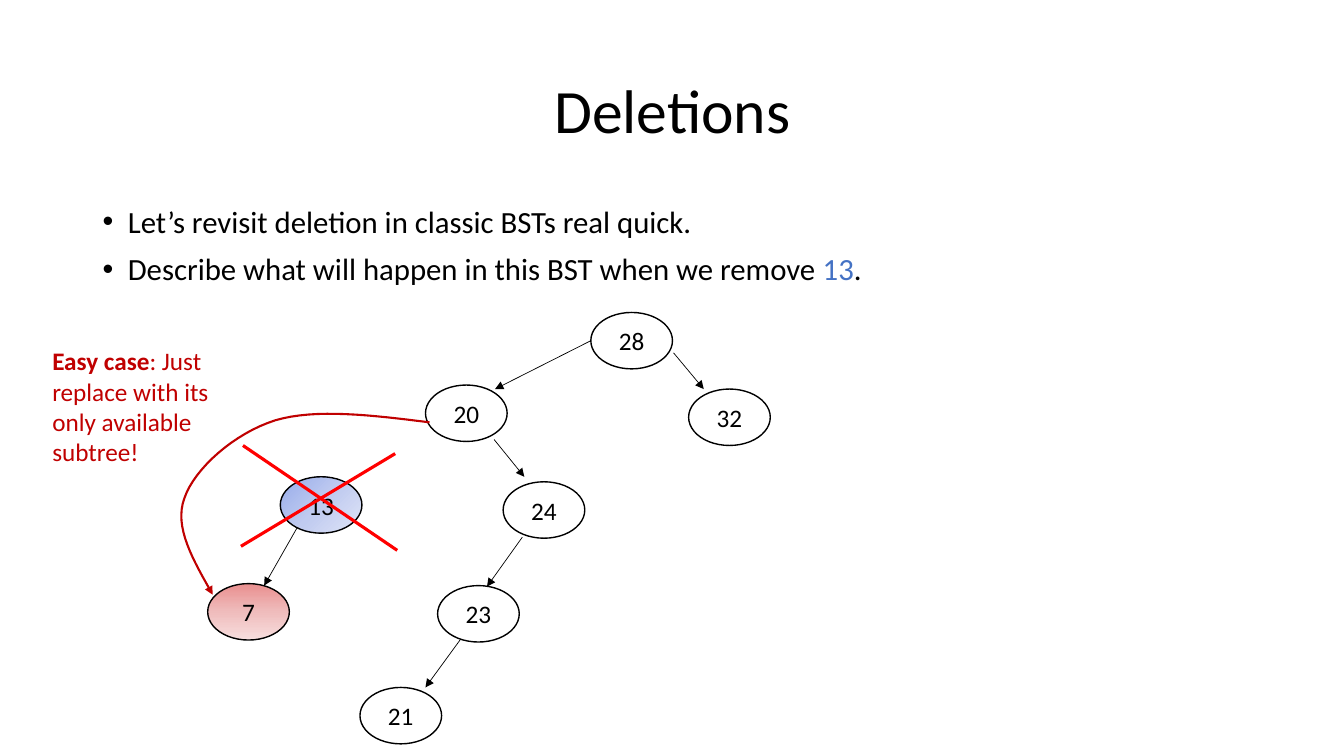
from lxml.etree import SubElement
from pptx import Presentation
from pptx.dml.color import RGBColor
from pptx.enum.shapes import MSO_CONNECTOR, MSO_SHAPE
from pptx.enum.text import MSO_ANCHOR, PP_ALIGN
from pptx.oxml.ns import qn
from pptx.util import Inches, Pt

HUES = {"ink": "000000", "blue": "4472C4", "note": "C00000", "cross": "FF0000"}
BLENDS = {
    "13": (45, ("96ABEA", "C0CBF0", "E0E5F7")),
    "7": (90, ("E98F8F", "EFBCBC", "F7DEDE")),
}
NODES = {
    "28": (3.8, 0), "20": (2.16, 0.72), "13": (0.72, 1.63), "7": (0, 2.69),
    "32": (4.77, 0.76), "24": (2.93, 1.68), "23": (2.28, 2.71), "21": (1.51, 3.72),
}
EDGES = [
    ((3.8, 0.28), (2.85, 0.76)), ((0.89, 2.13), (0.56, 2.71)),
    ((2.84, 1.26), (3.14, 1.63)), ((4.62, 0.4), (4.92, 0.76)),
    ((3.12, 2.23), (2.77, 2.72)), ((2.51, 3.24), (2.16, 3.72)),
]
CROSS = [((0.35, 1.32), (1.88, 2.36)), ((0.33, 2.32), (1.86, 1.4))]
CURVE = [
    (2.2, 1.09), (1.64, 1.02), (1.07, 0.95), (0.67, 1.07), (0.26, 1.2),
    (-0.13, 1.55), (-0.23, 1.84), (-0.34, 2.13), (-0.14, 2.46), (0.05, 2.8),
]


def add_run(para, text, size, hue="ink", bold=False):
    """Add one run of text in the slide's font."""
    run = para.add_run()
    run.text = text
    run.font.name = "Calibri"
    run.font.size = Pt(size)
    run.font.bold = bold
    run.font.color.rgb = RGBColor.from_string(HUES[hue])


def set_line(line, hue, width, arrow=False):
    """Colour a line and give it an arrowhead if asked."""
    line.color.rgb = RGBColor.from_string(HUES[hue])
    line.width = Pt(width)
    if arrow:
        SubElement(line._get_or_add_ln(), qn("a:tailEnd"), type="triangle")


def blend(fill, angle, stops):
    """Fill with evenly spaced gradient stops."""
    fill.gradient()
    grad = fill._xPr.find(qn("a:gradFill"))
    grad.find(qn("a:lin")).set("ang", str(angle * 60000))
    group = grad.find(qn("a:gsLst"))
    group.clear()
    for i, hue in enumerate(stops):
        stop = SubElement(group, qn("a:gs"), pos=str(i * 50000))
        SubElement(stop, qn("a:srgbClr"), val=hue)


def add_title(slide, box):
    """Place the slide title."""
    title = slide.shapes.title
    title.left, title.top, title.width, title.height = map(Inches, box)
    title.text_frame.vertical_anchor = MSO_ANCHOR.MIDDLE
    para = title.text_frame.paragraphs[0]
    para.alignment = PP_ALIGN.CENTER
    para.line_spacing = 0.9
    add_run(para, "Deletions", 44)


def add_text(slide, box):
    """Add a wrapping text box and return its frame."""
    frame = slide.shapes.add_textbox(*map(Inches, box)).text_frame
    frame.word_wrap = True
    return frame


def add_list(slide, box):
    """Place the bulleted list."""
    frame = add_text(slide, box)
    items = [
        [("Let’s revisit deletion in classic BSTs real quick.", "ink")],
        [("Describe what will happen in this BST when we remove ", "ink"),
         ("13", "blue"), (".", "ink")],
    ]
    for i, item in enumerate(items):
        para = frame.add_paragraph() if i else frame.paragraphs[0]
        para.line_spacing = 0.9
        para.space_before = Pt(10)
        props = para._p.get_or_add_pPr()
        props.set("marL", str(Inches(0.25)))
        props.set("indent", str(Inches(-0.25)))
        SubElement(props, qn("a:buFont"), typeface="Arial")
        SubElement(props, qn("a:buChar"), char="•")
        for text, hue in item:
            add_run(para, text, 22, hue)


def add_note(slide, box):
    """Place the red remark beside the tree."""
    para = add_text(slide, box).paragraphs[0]
    add_run(para, "Easy case", 18, "note", True)
    add_run(para, ": Just replace with its only available subtree!", 18, "note")


def add_node(slide, box, label):
    """Draw one labelled tree node."""
    node = slide.shapes.add_shape(MSO_SHAPE.OVAL, *map(Inches, box))
    node.shadow.inherit = False
    if label in BLENDS:
        blend(node.fill, *BLENDS[label])
    else:
        node.fill.background()
    set_line(node.line, "ink", 1)
    frame = node.text_frame
    frame.margin_left = frame.margin_right = 0
    frame.margin_top = frame.margin_bottom = 0
    frame.word_wrap = False
    frame.vertical_anchor = MSO_ANCHOR.MIDDLE
    para = frame.paragraphs[0]
    para.alignment = PP_ALIGN.CENTER
    add_run(para, label, 18)


def add_link(slide, ends, hue, width, arrow=False):
    """Draw a straight line between two points."""
    spots = [Inches(n) for end in ends for n in end]
    link = slide.shapes.add_connector(MSO_CONNECTOR.STRAIGHT, *spots)
    set_line(link.line, hue, width, arrow)
    SubElement(link._element.spPr, qn("a:effectLst"))


def bezier(a, b, c, d, steps=16):
    """Return points along a cubic curve, without its start."""
    points = []
    for i in range(1, steps + 1):
        t = i / steps
        u = 1 - t
        parts = (u**3, 3 * u * u * t, 3 * u * t * t, t**3)
        points.append(tuple(sum(k * n for k, n in zip(parts, axis))
                            for axis in zip(a, b, c, d)))
    return points


def add_curve(slide, knots):
    """Draw the curved arrow to the new child."""
    knots = [(Inches(x), Inches(y)) for x, y in knots]
    points = []
    for i in range(0, len(knots) - 1, 3):
        points += bezier(*knots[i:i + 4])
    form = slide.shapes.build_freeform(*knots[0])
    form.add_line_segments(points, close=False)
    curve = form.convert_to_shape()
    curve.shadow.inherit = False
    curve.fill.background()
    set_line(curve.line, "note", 1.5, True)


def add_tree(slide, box):
    """Draw the tree, the crossed-out node and the new link."""
    left, top = box[:2]

    def shift(points):
        """Move points into the box."""
        return [(left + x, top + y) for x, y in points]

    for label, spot in zip(NODES, shift(NODES.values())):
        add_node(slide, (*spot, 0.81, 0.56), label)
    for ends in EDGES:
        add_link(slide, shift(ends), "ink", 0.5, True)
    for ends in CROSS:
        add_link(slide, shift(ends), "cross", 2.25)
    add_curve(slide, shift(CURVE))


def main():
    """Build and save the slide."""
    deck = Presentation()
    deck.slide_width, deck.slide_height = Inches(13.33), Inches(7.5)
    slide = deck.slides.add_slide(deck.slide_layouts[5])
    add_title(slide, (0.92, 0.4, 11.5, 1.45))
    add_list(slide, (0.92, 2, 11.5, 4.76))
    add_note(slide, (0.42, 3.38, 1.99, 1.31))
    add_tree(slide, (2.06, 3.1, 5.58, 4.28))
    deck.save("out.pptx")


if __name__ == "__main__":
    main()
